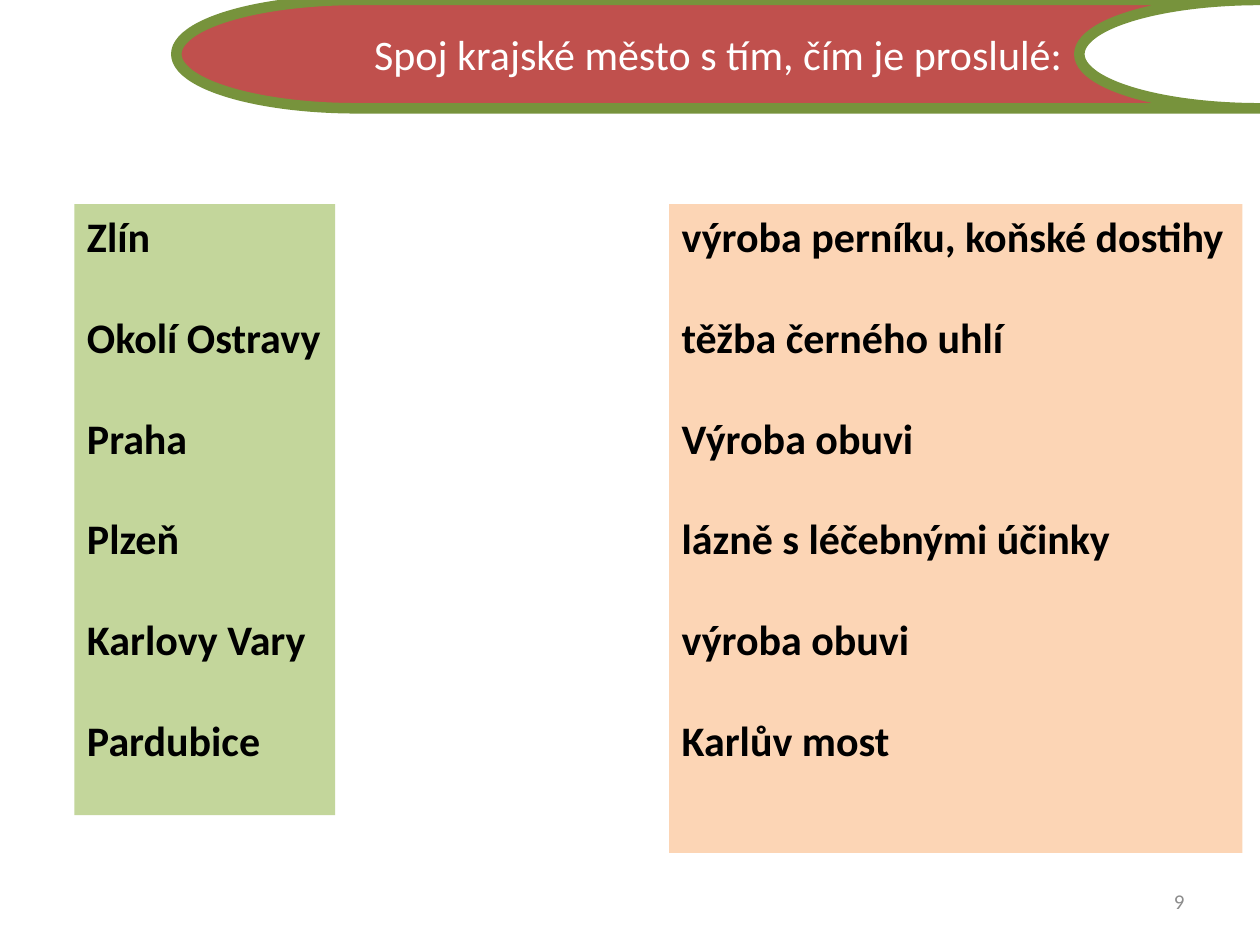
from lxml.etree import SubElement
from pptx import Presentation
from pptx.dml.color import RGBColor
from pptx.enum.shapes import MSO_SHAPE
from pptx.enum.text import MSO_ANCHOR, MSO_AUTO_SIZE, PP_ALIGN
from pptx.oxml.ns import qn
from pptx.util import Inches, Pt

RED = RGBColor(0xC0, 0x50, 0x4D)
OLIVE = RGBColor(0x77, 0x93, 0x3C)
GREEN = RGBColor(0xC3, 0xD6, 0x9B)
PEACH = RGBColor(0xFC, 0xD5, 0xB5)
BLACK = RGBColor(0, 0, 0)
WHITE = RGBColor(0xFF, 0xFF, 0xFF)
GREY = RGBColor(0x8C, 0x8C, 0x8C)

TITLE = "Spoj krajské město s tím, čím je proslulé:"
CITIES = ["Zlín", "Okolí Ostravy", "Praha", "Plzeň", "Karlovy Vary", "Pardubice"]
FEATURES = [
    "výroba perníku, koňské dostihy",
    "těžba černého uhlí",
    "Výroba obuvi",
    "lázně s léčebnými účinky",
    "výroba obuvi",
    "Karlův most",
]


def place(box, left, top, width, height):
    """Move and size a shape, in inches."""
    box.left, box.top = Inches(left), Inches(top)
    box.width, box.height = Inches(width), Inches(height)


def write(box, lines, size=24, color=BLACK, bold=False, align=PP_ALIGN.LEFT,
          anchor=MSO_ANCHOR.TOP, gap=0, wrap=True):
    """Fill a shape with one formatted paragraph for each line."""
    frame = box.text_frame
    frame.auto_size = MSO_AUTO_SIZE.NONE
    frame.word_wrap = wrap
    frame.vertical_anchor = anchor
    for index, line in enumerate(lines):
        para = frame.add_paragraph() if index else frame.paragraphs[0]
        para.alignment = align
        para.space_before = Pt(gap if index else 0)
        span = para.add_run()
        span.text = line
        span.font.name = "Calibri"
        span.font.size = Pt(size)
        span.font.bold = bold
        span.font.color.rgb = color


def remove_bullets(box):
    """Turn off bullets and hanging indents in a list."""
    for para in box.text_frame.paragraphs:
        properties = para._p.get_or_add_pPr()
        properties.set("marL", "0")
        properties.set("indent", "0")
        SubElement(properties, qn("a:buNone"))


def add_banner(page):
    """Set the title on a banner with a curved outline."""
    banner = page.shapes.add_shape(
        MSO_SHAPE.FLOWCHART_STORED_DATA,
        Inches(1.4), Inches(0), Inches(8.6), Inches(0.86))
    banner.shadow.inherit = False
    banner.fill.solid()
    banner.fill.fore_color.rgb = RED
    banner.line.color.rgb = OLIVE
    banner.line.width = Pt(6)
    title = page.shapes.title
    title.element.addprevious(banner.element)
    place(title, 2.83, 0, 5.74, 0.86)
    write(title, [TITLE], color=WHITE, align=PP_ALIGN.CENTER,
          anchor=MSO_ANCHOR.MIDDLE, wrap=False)


def fill_list(box, lines, color, left, width, height):
    """Format a body placeholder as a coloured column of terms."""
    place(box, left, 1.62, width, height)
    box.fill.solid()
    box.fill.fore_color.rgb = color
    write(box, lines, bold=True, gap=28.8)
    remove_bullets(box)


def add_page_number(page, number):
    """Add the page number at the bottom right."""
    box = page.shapes.add_textbox(
        Inches(7.17), Inches(6.95), Inches(2.33), Inches(0.4))
    write(box, [number], size=12, color=GREY, align=PP_ALIGN.RIGHT,
          anchor=MSO_ANCHOR.MIDDLE)


def main():
    """Build the matching exercise and save it."""
    deck = Presentation()
    deck.slide_width, deck.slide_height = Inches(10), Inches(7.5)
    page = deck.slides.add_slide(deck.slide_layouts.get_by_name("Two Content"))
    add_banner(page)
    fill_list(page.placeholders[1], CITIES, GREEN, 0.59, 2.07, 4.85)
    fill_list(page.placeholders[2], FEATURES, PEACH, 5.31, 4.55, 5.15)
    add_page_number(page, "9")
    deck.save("out.pptx")


if __name__ == "__main__":
    main()
